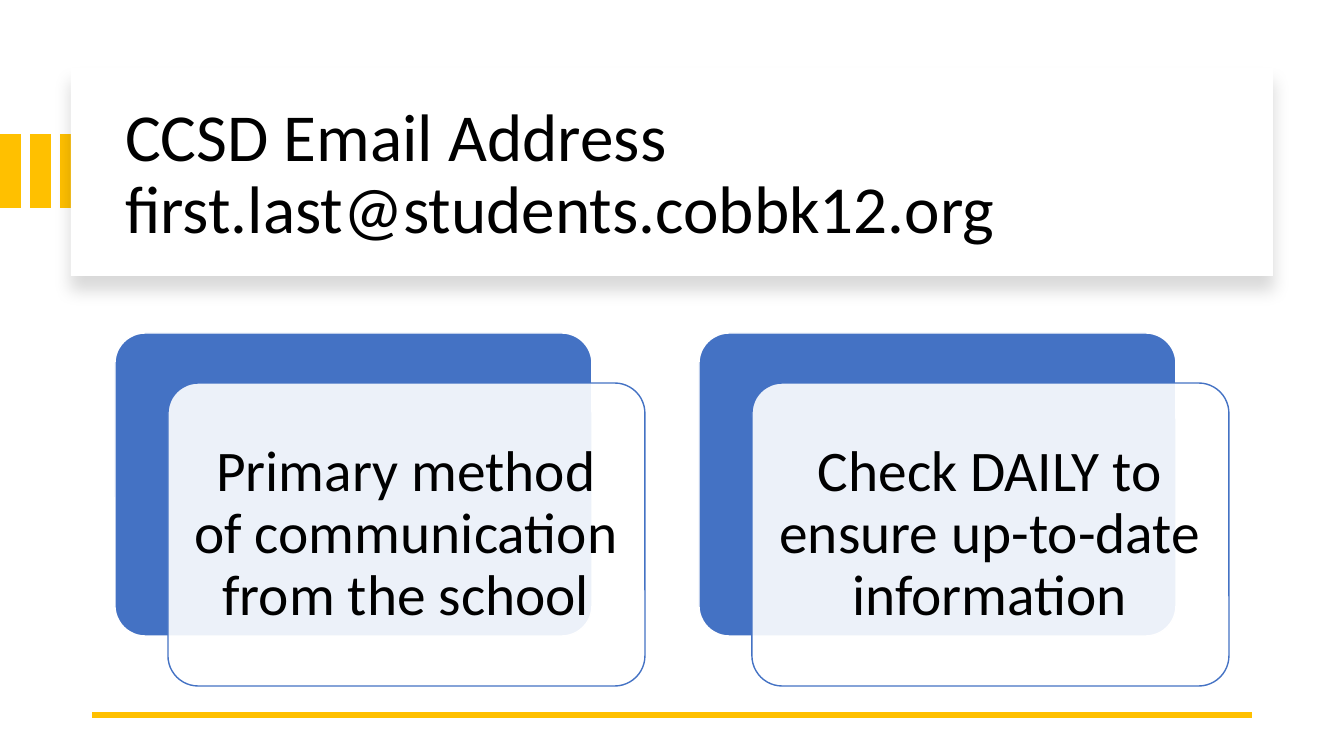
from lxml import etree
from pptx import Presentation
from pptx import util as u
from pptx.dml.color import RGBColor
from pptx.enum import shapes, text
from pptx.oxml.ns import qn

PX = 914400 / 100.8
GOLD, BLUE, WHITE, BLACK = "FFC000", "4472C4", "FFFFFF", "000000"
RECT = shapes.MSO_SHAPE.RECTANGLE
ROUNDED = shapes.MSO_SHAPE.ROUNDED_RECTANGLE


def px(length):
    return u.Emu(round(length * PX))


def color(value):
    return RGBColor.from_string(value)


class Slide:
    font = "Calibri"

    def __init__(self, deck):
        self.shapes = deck.slides.add_slide(deck.slide_layouts[6]).shapes

    def box(self, kind, x, y, w, h, fill, line=None, opacity=100):
        box = self.shapes.add_shape(kind, px(x), px(y), px(w), px(h))
        box.shadow.inherit = False
        box.fill.solid()
        box.fill.fore_color.rgb = color(fill)
        if opacity < 100:
            tint = box._element.spPr.find(qn("a:solidFill"))[0]
            etree.SubElement(tint, qn("a:alpha"), val=str(opacity * 1000))
        if line:
            box.line.color.rgb = color(line)
            box.line.width = u.Pt(1)
        else:
            box.line.fill.background()
        if kind == ROUNDED:
            box.adjustments[0] = 0.1
        return box

    def drop_shadow(self, box, blur, distance, opacity):
        effects = box._element.spPr.find(qn("a:effectLst"))
        shadow = etree.SubElement(
            effects, qn("a:outerShdw"), blurRad=str(u.Pt(blur)),
            dist=str(u.Pt(distance)), dir="5400000", rotWithShape="0")
        tint = etree.SubElement(shadow, qn("a:srgbClr"), val=BLACK)
        etree.SubElement(tint, qn("a:alpha"), val=str(opacity * 1000))

    def words(self, content, x, y, w, h, size, align, inset_x, inset_y):
        frame = self.shapes.add_textbox(px(x), px(y), px(w), px(h)).text_frame
        frame.word_wrap = True
        frame.vertical_anchor = text.MSO_ANCHOR.MIDDLE
        frame.margin_left = frame.margin_right = px(inset_x)
        frame.margin_top = frame.margin_bottom = px(inset_y)
        paragraph = frame.paragraphs[0]
        paragraph.text = content
        paragraph.alignment = align
        paragraph.line_spacing = 0.9
        paragraph.font.name = self.font
        paragraph.font.size = u.Pt(size)
        paragraph.font.color.rgb = color(BLACK)

    def rule(self, x1, y1, x2, y2, stroke, width):
        rule = self.shapes.add_connector(
            shapes.MSO_CONNECTOR.STRAIGHT, px(x1), px(y1), px(x2), px(y2))
        rule.line.color.rgb = color(stroke)
        rule.line.width = u.Pt(width)
        etree.SubElement(rule._element.spPr, qn("a:effectLst"))


def main():
    deck = Presentation()
    deck.slide_width, deck.slide_height = px(1344), px(756)
    slide = Slide(deck)

    # Gold bars running in behind the title card
    for bar in range(3):
        slide.box(RECT, bar * 30, 134, 21, 74, GOLD)

    # Title card
    title_card = slide.box(RECT, 71, 68, 1202, 208, WHITE)
    slide.drop_shadow(title_card, blur=11, distance=10, opacity=15)
    slide.words("CCSD Email Address\vfirst.last@students.cobbk12.org",
                115, 90, 1122, 171, 48, text.PP_ALIGN.LEFT, 10, 5)

    # Gold rule at the foot
    slide.rule(1252, 715, 92, 715, GOLD, 4.5)

    # Message cards, each a translucent panel over a blue one
    messages = ("Primary method of communication from the school",
                "Check DAILY to ensure up-to-date information")
    for column, message in enumerate(messages):
        left = 115 + column * 584
        slide.box(ROUNDED, left, 333, 477, 303, BLUE, line=WHITE)
        slide.box(ROUNDED, left + 53, 383, 477, 303, WHITE, line=BLUE, opacity=90)
        slide.words(message, left + 61, 392, 460, 285, 41,
                    text.PP_ALIGN.CENTER, 17, 17)

    deck.save("out.pptx")


if __name__ == "__main__":
    main()
